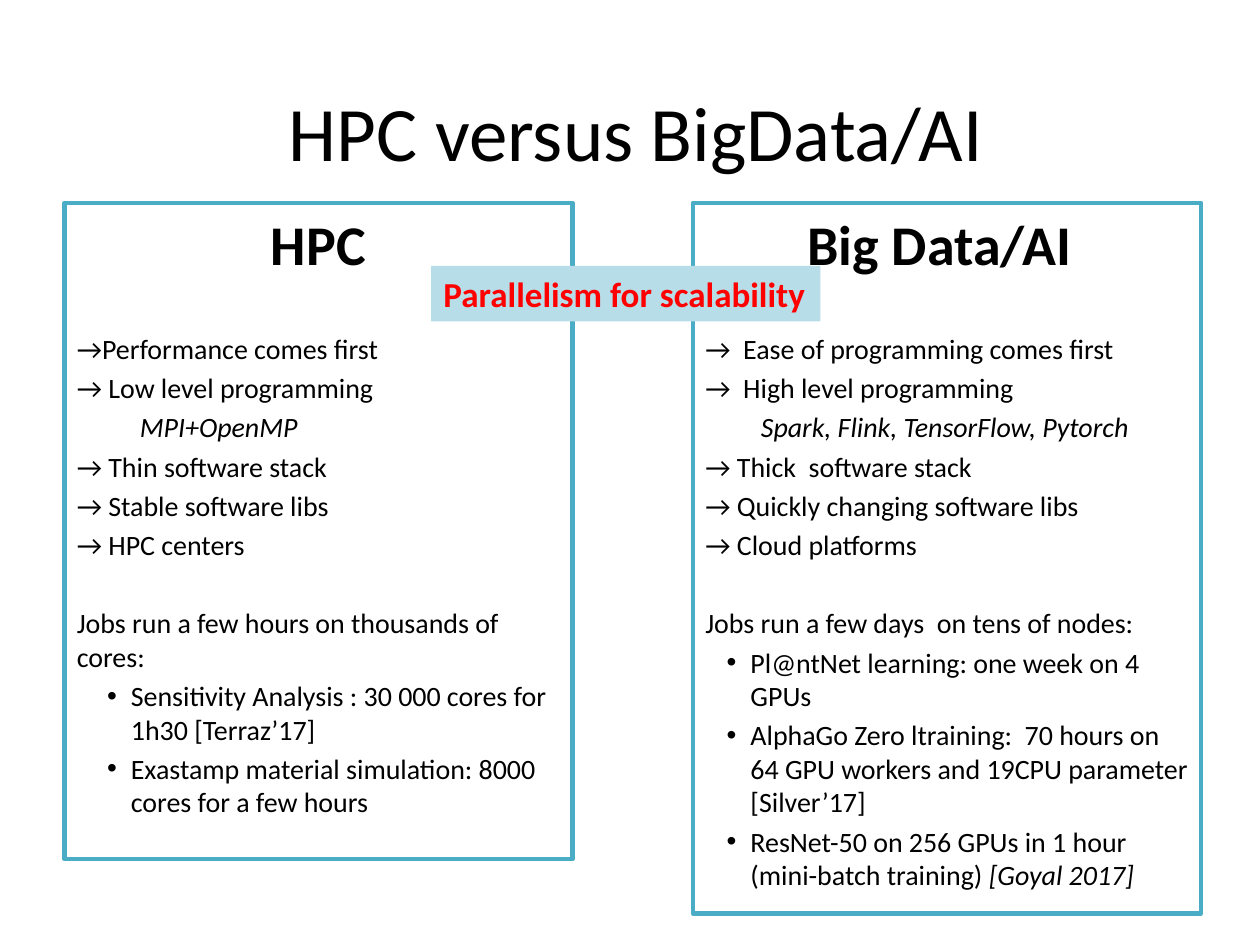
from lxml.etree import SubElement
from pptx import Presentation
from pptx.dml.color import RGBColor
from pptx.enum.shapes import MSO_SHAPE as Shape
from pptx.enum.text import MSO_ANCHOR as Anchor, MSO_AUTO_SIZE as AutoSize, PP_ALIGN as Align
from pptx.oxml.ns import qn
from pptx.util import Cm, Pt

BLACK = RGBColor(0x00, 0x00, 0x00)
RED = RGBColor(0xFF, 0x00, 0x00)
TEAL = RGBColor(0x4B, 0xAC, 0xC6)
PALE_BLUE = RGBColor(0xB7, 0xDE, 0xE8)

FONT = "Calibri"
PANEL_TOP, PANEL_WIDTH = Cm(4.09), Cm(10.24)
BULLET_HANG = Cm(0.48)
ITEM_GAP, HEADING_GAP, JOBS_GAP = Pt(3.2), Pt(31.6), Pt(25.6)

# Each line: kind, text and, where there is one, a citation in italics
HPC_LINES = [
    ("first", "→Performance comes first"),
    ("item", "→ Low level programming"),
    ("tools", "MPI+OpenMP"),
    ("item", "→ Thin software stack"),
    ("item", "→ Stable software libs"),
    ("item", "→ HPC centers"),
    ("jobs", "Jobs run a few hours on thousands of cores:"),
    ("bullet", "Sensitivity Analysis : 30 000 cores for 1h30 [Terraz’17]"),
    ("bullet", "Exastamp material simulation: 8000 cores for a few hours"),
]
BIG_DATA_LINES = [
    ("first", "→  Ease of programming comes first"),
    ("item", "→  High level programming"),
    ("tools", "Spark, Flink, TensorFlow, Pytorch"),
    ("item", "→ Thick  software stack"),
    ("item", "→ Quickly changing software libs"),
    ("item", "→ Cloud platforms"),
    ("jobs", "Jobs run a few days  on tens of nodes:"),
    ("bullet", "Pl@ntNet learning: one week on 4 GPUs"),
    ("bullet", "AlphaGo Zero ltraining:  70 hours on  64 GPU workers "
               "and 19CPU parameter [Silver’17]"),
    ("bullet", "ResNet-50 on 256 GPUs in 1 hour (mini-batch training) ", "[Goyal 2017]"),
]


def format_runs(paragraph, size, color=BLACK, bold=False, italic=False):
    for run in paragraph.runs:
        font = run.font
        font.name, font.size = FONT, Pt(size)
        font.bold, font.italic = bold, italic
        font.color.rgb = color


def set_indent(paragraph, left, first=0):
    properties = paragraph._p.get_or_add_pPr()
    properties.set("marL", str(int(left)))
    properties.set("indent", str(int(first)))


def add_bullet(paragraph, left):
    set_indent(paragraph, left, -BULLET_HANG)
    properties = paragraph._p.get_or_add_pPr()
    SubElement(properties, qn("a:buFont")).set("typeface", "Arial")
    SubElement(properties, qn("a:buChar")).set("char", "•")


def add_title(slide, text):
    box = slide.shapes.add_textbox(Cm(0.74), Cm(1.96), Cm(24.18), Cm(1.37))
    frame = box.text_frame
    frame.word_wrap = True
    frame.vertical_anchor = Anchor.MIDDLE
    frame.text = text
    frame.paragraphs[0].alignment = Align.CENTER
    format_runs(frame.paragraphs[0], 44)


def add_rectangle(slide, left, top, width, height):
    shape = slide.shapes.add_shape(Shape.RECTANGLE, left, top, width, height)
    shape.shadow.inherit = False
    return shape


def add_line(frame, kind, text, citation, tools_indent, bullet_indent):
    paragraph = frame.add_paragraph()
    paragraph.text = text
    if kind == "bullet":
        add_bullet(paragraph, bullet_indent)
    elif kind == "tools":
        set_indent(paragraph, tools_indent)
    paragraph.alignment = Align.LEFT
    paragraph.space_before = {"first": HEADING_GAP, "jobs": JOBS_GAP}.get(kind, ITEM_GAP)
    format_runs(paragraph, 16, italic=kind == "tools")
    if citation:
        run = paragraph.add_run()
        run.text = citation
        run.font.name, run.font.size = FONT, Pt(16)
        run.font.italic = True
        run.font.color.rgb = BLACK


def add_panel(slide, left, height, heading, lines, tools_indent, bullet_indent,
              heading_indent=None):
    panel = add_rectangle(slide, left, PANEL_TOP, PANEL_WIDTH, height)
    panel.fill.background()
    panel.line.color.rgb = TEAL
    panel.line.width = Pt(2.5)
    frame = panel.text_frame
    frame.word_wrap = True
    frame.vertical_anchor = Anchor.TOP

    # Heading: centred unless it has an indent of its own
    frame.text = heading
    title = frame.paragraphs[0]
    title.alignment = Align.CENTER
    if heading_indent is not None:
        set_indent(title, heading_indent)
        title.alignment = Align.LEFT
    format_runs(title, 32, bold=True)

    for kind, text, *citation in lines:
        add_line(frame, kind, text, "".join(citation), tools_indent, bullet_indent)


def add_label(slide, text):
    label = add_rectangle(slide, Cm(8.69), Cm(5.36), Cm(7.85), Cm(1.12))
    label.fill.solid()
    label.fill.fore_color.rgb = PALE_BLUE
    label.line.fill.background()
    frame = label.text_frame
    frame.word_wrap = False
    frame.auto_size = AutoSize.SHAPE_TO_FIT_TEXT
    frame.vertical_anchor = Anchor.TOP
    frame.text = text
    frame.paragraphs[0].alignment = Align.LEFT
    format_runs(frame.paragraphs[0], 20, RED, bold=True)


def main():
    presentation = Presentation()
    presentation.slide_width, presentation.slide_height = Cm(25.4), Cm(19.05)
    slide = presentation.slides.add_slide(presentation.slide_layouts[6])

    add_title(slide, "HPC versus BigData/AI")

    # The two sides of the comparison
    add_panel(slide, Cm(1.3), Cm(13.23), "HPC", HPC_LINES,
              tools_indent=Cm(1.27), bullet_indent=Cm(1.09))
    add_panel(slide, Cm(13.97), Cm(14.33), "Big Data/AI", BIG_DATA_LINES,
              tools_indent=Cm(1.12), bullet_indent=Cm(0.91), heading_indent=Cm(2.06))

    # What both sides share
    add_label(slide, "Parallelism for scalability")

    presentation.save("out.pptx")


if __name__ == "__main__":
    main()
